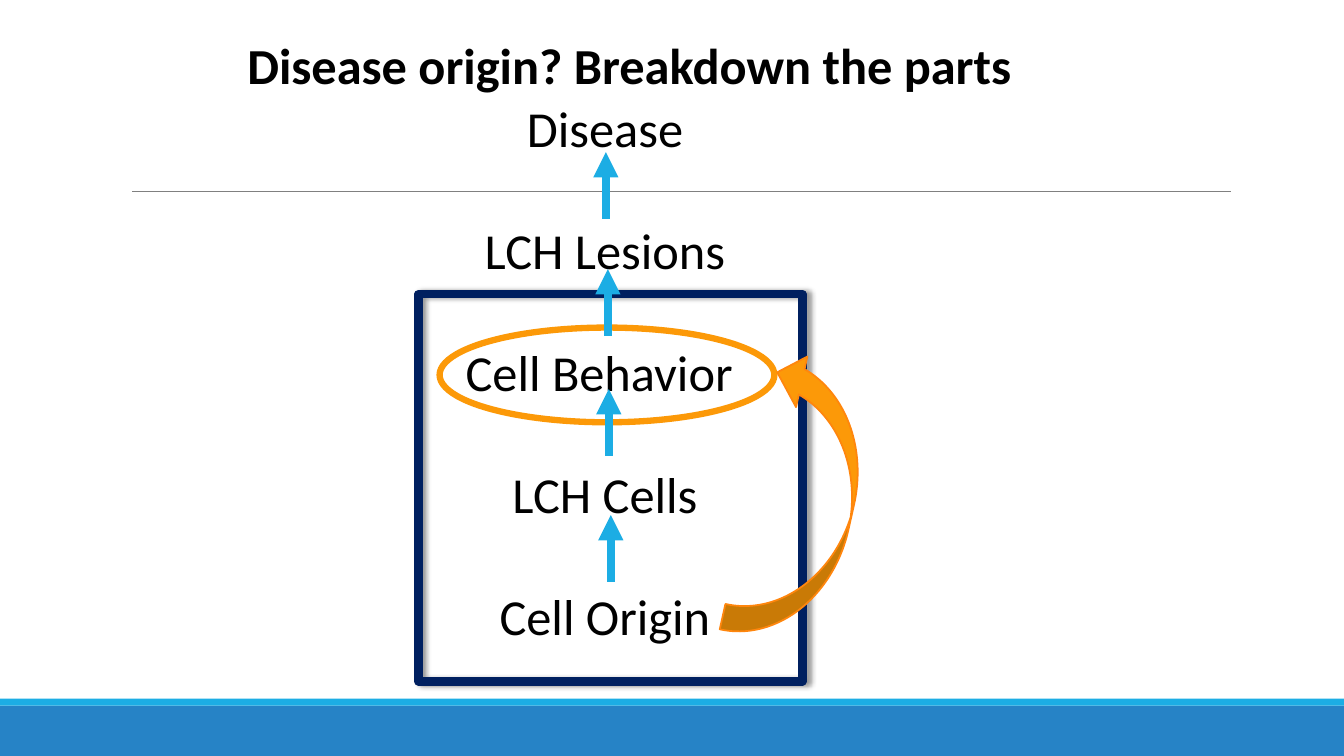
"""Build the slide that breaks a disease down into its parts."""
from pptx import Presentation
from pptx.dml.color import RGBColor
from pptx.enum.shapes import MSO_CONNECTOR, MSO_SHAPE
from pptx.enum.text import MSO_ANCHOR, MSO_AUTO_SIZE, PP_ALIGN
from pptx.oxml import parse_xml
from pptx.oxml.ns import nsdecls
from pptx.util import Inches, Pt

RECT, OVAL, CURVE = MSO_SHAPE.RECTANGLE, MSO_SHAPE.OVAL, MSO_SHAPE.CURVED_UP_ARROW
STRAIGHT = MSO_CONNECTOR.STRAIGHT
CENTER, TOP, NO_FIT = PP_ALIGN.CENTER, MSO_ANCHOR.TOP, MSO_AUTO_SIZE.NONE

BLACK = RGBColor(0x00, 0x00, 0x00)
GRAY = RGBColor(0x80, 0x80, 0x80)
BLUE = RGBColor(0x26, 0x83, 0xC6)
CYAN = RGBColor(0x1C, 0xAD, 0xE4)
NAVY = RGBColor(0x00, 0x20, 0x60)
ORANGE = RGBColor(0xFC, 0x99, 0x08)
DEEP_ORANGE = RGBColor(0xFF, 0x86, 0x0D)

WIDTH, HEIGHT = Inches(13.33), Inches(7.5)
LEVELS = ["Disease", "LCH Lesions", "Cell Behavior ", "LCH Cells", "Cell Origin"]
ARROW_TAILS = [(45.45, 76.93), (45.3, 60.27), (45.23, 44.4), (45.08, 28.93)]
ARROW_LENGTH = 8.8


def across(share):
    """Turn a percentage of the slide width into a length."""
    return int(WIDTH * share / 100)


def down(share):
    """Turn a percentage of the slide height into a length."""
    return int(HEIGHT * share / 100)


def box(left, top, width, height):
    """Turn a box in percentages of the slide into lengths."""
    return across(left), down(top), across(width), down(height)


def fill_placeholder(sp, area, lines, gap=0, bold=False):
    """Place a placeholder and write centred lines without bullets."""
    sp.left, sp.top, sp.width, sp.height = box(*area)
    tf = sp.text_frame
    tf.text = "\n".join(lines)
    tf.word_wrap = True
    tf.auto_size = NO_FIT
    tf.vertical_anchor = TOP
    for i, p in enumerate(tf.paragraphs):
        pPr = p._p.get_or_add_pPr()
        pPr.set("marL", "0")
        pPr.set("indent", "0")
        pPr.append(parse_xml(f"<a:buNone {nsdecls('a')}/>"))
        p.alignment = CENTER
        p.space_before = Pt(gap if i else 0)
        for r in p.runs:
            r.font.name = "Calibri"
            r.font.size = Pt(36)
            r.font.bold = bold
            r.font.color.rgb = BLACK


def add_figure(s, kind, area, fill=None, line=None, weight=0):
    """Add a preset shape with an optional fill and outline."""
    sp = s.shapes.add_shape(kind, *box(*area))
    sp.shadow.inherit = False
    if fill is None:
        sp.fill.background()
    else:
        sp.fill.solid()
        sp.fill.fore_color.rgb = fill
    if line is None:
        sp.line.fill.background()
    else:
        sp.line.color.rgb = line
        sp.line.width = Pt(weight)
    return sp


def add_line(s, start, end, color, weight, arrow=False):
    """Add a straight line, with a triangle at its end for an arrow."""
    cx = s.shapes.add_connector(STRAIGHT, across(start[0]), down(start[1]),
                                across(end[0]), down(end[1]))
    cx.line.color.rgb = color
    cx.line.width = Pt(weight)
    if arrow:
        cx.line._get_or_add_ln().append(
            parse_xml(f'<a:tailEnd {nsdecls("a")} type="triangle"/>'))
    cx._element.spPr.append(parse_xml(f"<a:effectLst {nsdecls('a')}/>"))


def add_soft_frame(s, area):
    """Add the navy frame with round joins and a shadow to its right."""
    sp = add_figure(s, RECT, area, line=NAVY, weight=6)
    sp.line._get_or_add_ln().append(parse_xml(f"<a:round {nsdecls('a')}/>"))
    effects = sp._element.spPr.find("{*}effectLst")
    effects.append(parse_xml(
        f'<a:outerShdw {nsdecls("a")} blurRad="{Pt(4)}" dist="{Pt(3)}" dir="0" '
        'algn="l" rotWithShape="0"><a:srgbClr val="000000">'
        '<a:alpha val="40000"/></a:srgbClr></a:outerShdw>'))


def main():
    """Build and save the slide."""
    prs = Presentation()
    prs.slide_width, prs.slide_height = WIDTH, HEIGHT
    s = prs.slides.add_slide(prs.slide_layouts[1])
    title, body = s.placeholders

    fill_placeholder(title, (16.2, 3.87, 61.29, 13.47),
                     ["Disease origin? Breakdown the parts"], bold=True)
    fill_placeholder(body, (30.31, 12.13, 29.41, 78.13), LEVELS, gap=44)

    add_figure(s, RECT, (0, 93.33, 100, 6.67), fill=BLUE)
    add_figure(s, RECT, (0, 92.4, 100, 0.93), fill=CYAN)
    add_line(s, (9.83, 25.33), (91.6, 25.33), GRAY, 0.5)

    add_soft_frame(s, (31.13, 38.93, 28.58, 51.2))
    add_figure(s, OVAL, (32.71, 43.33, 24.91, 12.53), line=ORANGE, weight=4.5)
    curve = add_figure(s, CURVE, (48.91, 59.2, 21.53, 13.73),
                       fill=ORANGE, line=DEEP_ORANGE, weight=1.25)
    curve.rotation = 282.6

    for x, y in ARROW_TAILS:
        add_line(s, (x, y), (x, y - ARROW_LENGTH), CYAN, 6, arrow=True)

    prs.save("out.pptx")


if __name__ == "__main__":
    main()
